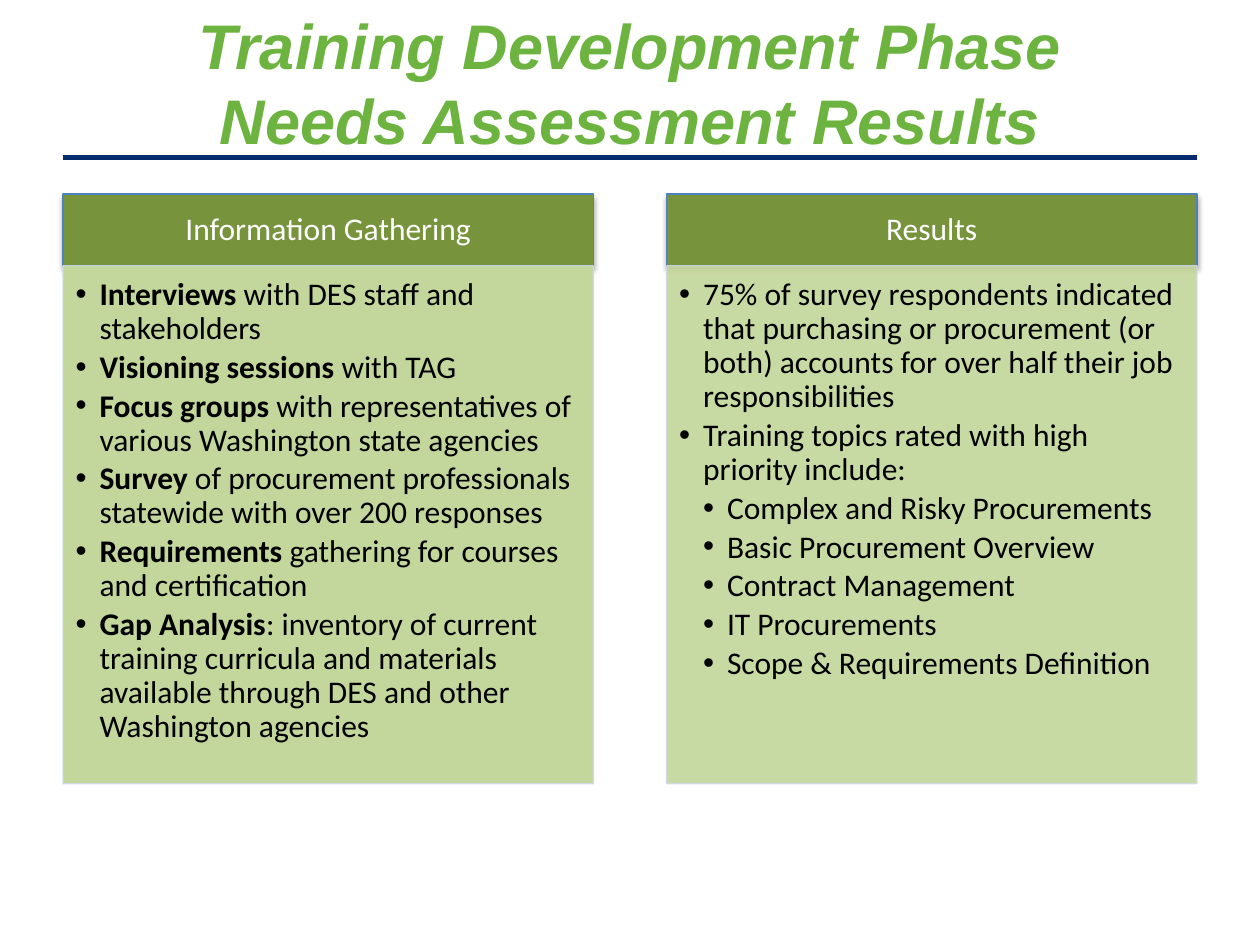
"""Build the needs assessment slide with two headed lists."""
from lxml import etree
from pptx import Presentation
from pptx.dml.color import RGBColor
from pptx.enum.shapes import MSO_CONNECTOR
from pptx.enum.text import MSO_ANCHOR, MSO_AUTO_SIZE, PP_ALIGN
from pptx.oxml import parse_xml
from pptx.oxml.ns import nsdecls, qn
from pptx.util import Inches, Pt


def paint(color, value):
    color.rgb = RGBColor.from_string(value)


def place(box, area, insets, anchor):
    box.left, box.top, box.width, box.height = [Inches(n) for n in area]
    frame = box.text_frame
    frame.word_wrap = True
    frame.auto_size = MSO_AUTO_SIZE.NONE
    frame.vertical_anchor = anchor
    (frame.margin_left, frame.margin_top,
     frame.margin_right, frame.margin_bottom) = [Inches(n) for n in insets]
    return frame


PANELS = [
    ("Information Gathering", 100, [
        (0, "Interviews", " with DES staff and stakeholders"),
        (0, "Visioning sessions", " with TAG"),
        (0, "Focus groups ", "with representatives of various Washington state agencies"),
        (0, "Survey", " of procurement professionals statewide with over 200 responses"),
        (0, "Requirements", " gathering for courses and certification"),
        (0, "Gap Analysis", ": inventory of current training curricula and materials "
                            "available through DES and other Washington agencies"),
    ]),
    ("Results", 90, [
        (0, "", "75% of survey respondents indicated that purchasing or procurement "
                "(or both) accounts for over half their job responsibilities"),
        (0, "", "Training topics rated with high priority include:"),
        (1, "", "Complex and Risky Procurements"),
        (1, "", "Basic Procurement Overview"),
        (1, "", "Contract Management"),
        (1, "", "IT Procurements"),
        (1, "", "Scope & Requirements Definition"),
    ]),
]
SHADOW = (f'<a:effectLst {nsdecls("a")}><a:outerShdw blurRad="39370" dist="22860" '
          'dir="5400000" rotWithShape="0"><a:srgbClr val="000000">'
          '<a:alpha val="35000"/></a:srgbClr></a:outerShdw></a:effectLst>')

deck = Presentation()
deck.slide_width, deck.slide_height = Inches(10), Inches(7.5)
slide = deck.slides.add_slide(deck.slide_layouts.get_by_name("Comparison"))
holders = {item.placeholder_format.idx: item for item in slide.placeholders}

rule = slide.shapes.add_connector(
    MSO_CONNECTOR.STRAIGHT, Inches(0.5), Inches(1.25), Inches(9.5), Inches(1.25))
paint(rule.line.color, "032B6D")
rule.line.width = Pt(3)
etree.SubElement(rule.element.spPr, qn("a:effectLst"))

frame = place(holders[0], (0.5, 0, 9, 1), (0.1, 0.05, 0.1, 0.05), MSO_ANCHOR.TOP)
para = frame.paragraphs[0]
para.alignment = PP_ALIGN.CENTER
para.line_spacing = 1.0
for order, words in enumerate(("Training Development Phase", "Needs Assessment Results")):
    if order:
        para.add_line_break()
    run = para.add_run()
    run.text = words
    run.font.name, run.font.size = "Arial", Pt(36)
    run.font.bold = run.font.italic = True
    paint(run.font.color, "6DB33F")

for col, (name, alpha, items) in enumerate(PANELS):
    left = 0.5 + col * 4.79
    head, body = holders[1 + 2 * col], holders[2 + 2 * col]

    frame = place(head, (left, 1.54, 4.21, 0.57), (0.14, 0.08, 0.14, 0.08), MSO_ANCHOR.MIDDLE)
    para = frame.paragraphs[0]
    para.alignment = PP_ALIGN.CENTER
    para.line_spacing = 0.9
    para.space_before = Pt(0)
    run = para.add_run()
    run.text = name
    run.font.name, run.font.size, run.font.bold = "Calibri", Pt(18), False
    paint(run.font.color, "FFFFFF")

    frame = place(body, (left, 2.11, 4.21, 4.11), (0.1, 0.1, 0.14, 0.16), MSO_ANCHOR.TOP)
    for order, (level, lead, rest) in enumerate(items):
        para = frame.add_paragraph() if order else frame.paragraphs[0]
        para.level = level
        para.line_spacing = 0.9
        para.space_before, para.space_after = Pt(0), Pt(2.7)
        props = para._p.get_or_add_pPr()
        props.set("marL", str(Inches(0.19 * (level + 1))))
        props.set("indent", str(Inches(-0.19)))
        etree.SubElement(props, qn("a:buFont"), typeface="Arial")
        etree.SubElement(props, qn("a:buChar"), char="•")
        for words, bold in ((lead, True), (rest, False)):
            if words:
                run = para.add_run()
                run.text = words
                run.font.name, run.font.size, run.font.bold = "Calibri", Pt(18), bold
                paint(run.font.color, "000000")

    for box, fill, edge in ((head, "77933C", "4F81BD"), (body, "C3D69B", "D0D8E8")):
        box.fill.solid()
        paint(box.fill.fore_color, fill)
        paint(box.line.color, edge)
        box.line.width = Pt(0.75)
    head.element.spPr.append(parse_xml(SHADOW))
    tints = list(body.element.spPr.iter(qn("a:srgbClr")))
    for tint, value in zip(tints, (alpha, 90)):
        etree.SubElement(tint, qn("a:alpha"), val=str(value * 1000))

deck.save("out.pptx")
